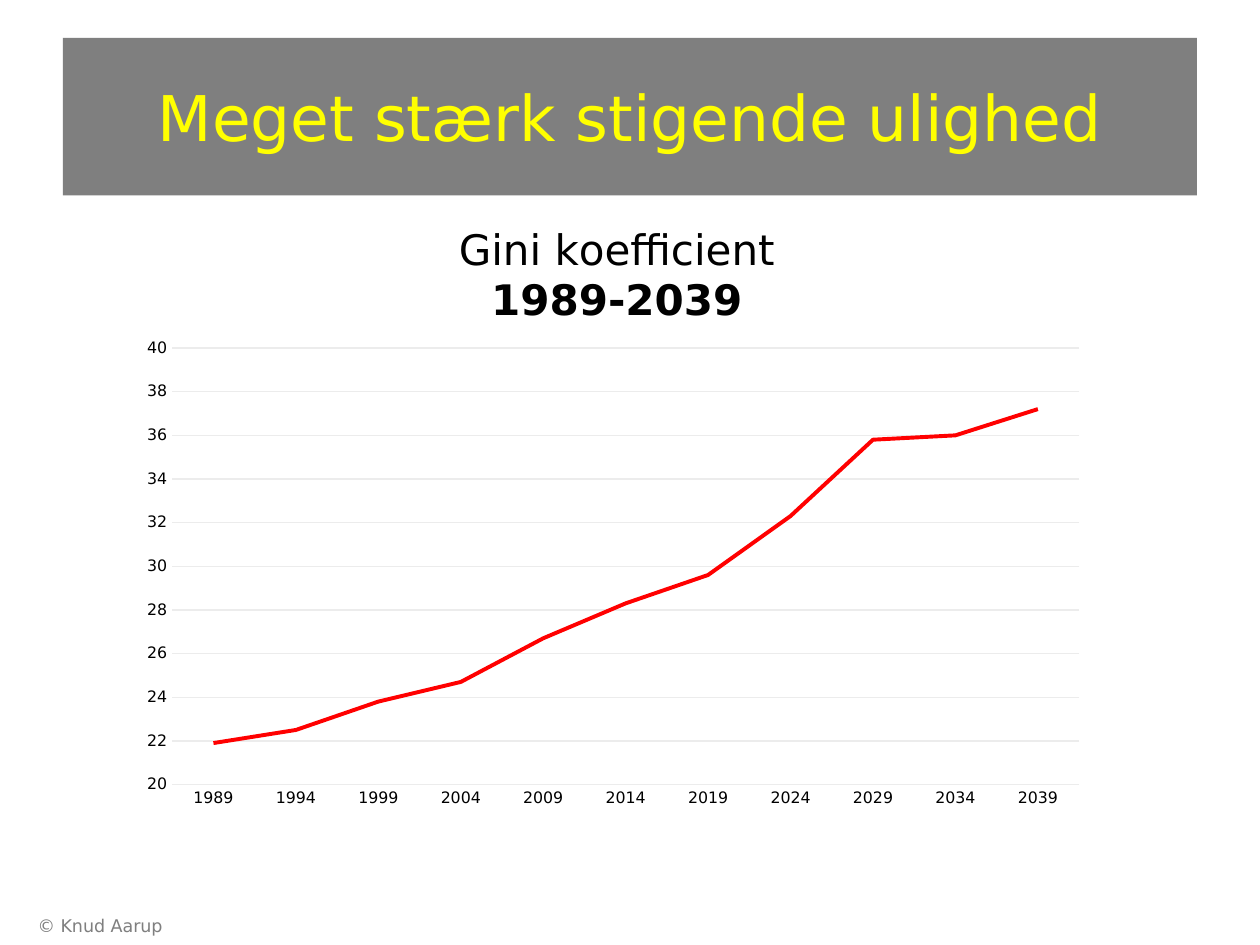
import pptx
import pptx.chart.data
import pptx.dml.color
import pptx.enum.chart
import pptx.enum.shapes
import pptx.enum.text
import pptx.oxml
import pptx.oxml.ns
import pptx.util
from pptx.util import Inches

FONT = "DejaVu Sans"
COLORS = {"band": "7F7F7F", "heading": "FFFF00", "footer": "7F7F7F",
          "text": "000000", "grid": "ECECEC", "gini": "FF0000"}

HEADING = "Meget stærk stigende ulighed"
FOOTER = "© Knud Aarup"
CHART_TITLE = [("Gini koefficient", False), ("1989-2039", True)]
YEARS = [str(year) for year in range(1989, 2040, 5)]
GINI = [21.9, 22.5, 23.8, 24.7, 26.7, 28.3, 29.6, 32.3, 35.8, 36, 37.2]


def rgb(name):
    return pptx.dml.color.RGBColor.from_string(COLORS[name])


def set_font(font, size, color, bold=False):
    font.name = FONT
    font.size = pptx.util.Pt(size)
    font.bold = bold
    font.color.rgb = rgb(color)


def set_line(line, color, width):
    line.color.rgb = rgb(color)
    line.width = pptx.util.Pt(width)


def manual_layout(inner=False, **fractions):
    """Return a c:layout element placed by fractions of the chart's size."""
    target = '<c:layoutTarget val="inner"/>' if inner else ""
    modes = '<c:xMode val="edge"/><c:yMode val="edge"/>'
    sizes = "".join(f'<c:{key} val="{value}"/>' for key, value in fractions.items())
    return pptx.oxml.parse_xml(
        f'<c:layout {pptx.oxml.ns.nsdecls("c")}><c:manualLayout>'
        f"{target}{modes}{sizes}</c:manualLayout></c:layout>")


def replace_layout(parent, layout, position):
    for old in parent.findall(pptx.oxml.ns.qn("c:layout")):
        parent.remove(old)
    parent.insert(position, layout)


def add_heading(slide):
    band = slide.shapes.add_shape(pptx.enum.shapes.MSO_SHAPE.RECTANGLE,
                                  Inches(0.5), Inches(0.3), Inches(9), Inches(1.25))
    band.shadow.inherit = False
    band.fill.solid()
    band.fill.fore_color.rgb = rgb("band")
    band.line.fill.background()
    frame = band.text_frame
    frame.vertical_anchor = pptx.enum.text.MSO_ANCHOR.MIDDLE
    heading = frame.paragraphs[0]
    heading.text = HEADING
    heading.alignment = pptx.enum.text.PP_ALIGN.CENTER
    set_font(heading.font, 36, "heading")


def add_footer(slide):
    frame = slide.shapes.add_textbox(Inches(0.2), Inches(7.21),
                                     Inches(2.33), Inches(0.29)).text_frame
    frame.word_wrap = True
    footer = frame.paragraphs[0]
    footer.text = FOOTER
    set_font(footer.font, 10, "footer")


def add_gini_chart(slide):
    data = pptx.chart.data.CategoryChartData()
    data.categories = YEARS
    data.add_series("Gini koefficient", GINI)
    chart = slide.shapes.add_chart(pptx.enum.chart.XL_CHART_TYPE.LINE, Inches(0.98),
                                   Inches(1.55), Inches(7.74), Inches(4.95), data).chart
    chart.has_legend = False
    set_font(chart.font, 10, "text")

    title = chart.chart_title
    frame = title.text_frame
    for index, (text, bold) in enumerate(CHART_TITLE):
        paragraph = frame.add_paragraph() if index else frame.paragraphs[0]
        paragraph.text = text
        set_font(paragraph.font, 24, "text", bold)
    title.include_in_layout = False
    replace_layout(title._element, manual_layout(x=0.34, y=0.04), 1)

    no_tick = pptx.enum.chart.XL_TICK_MARK.NONE
    for axis in (chart.category_axis, chart.value_axis):
        axis.major_tick_mark = axis.minor_tick_mark = no_tick
        set_font(axis.tick_labels.font, 9, "text")
    set_line(chart.category_axis.format.line, "grid", 0.75)

    values = chart.value_axis
    values.minimum_scale, values.maximum_scale, values.major_unit = 20, 40, 2
    values.format.line.fill.background()
    set_line(values.major_gridlines.format.line, "grid", 0.75)
    values.tick_labels.number_format = "#,##0"
    values.tick_labels.number_format_is_linked = False

    plot = chart.plots[0]
    plot.vary_by_categories = False
    gini = plot.series[0]
    gini.smooth = False
    gini.marker.style = pptx.enum.chart.XL_MARKER_STYLE.NONE
    set_line(gini.format.line, "gini", 2.25)
    plot_area = chart._chartSpace.chart.plotArea
    replace_layout(plot_area,
                   manual_layout(inner=True, x=0.05, y=0.245, w=0.93, h=0.7), 0)


def main():
    deck = pptx.Presentation()
    deck.slide_width, deck.slide_height = Inches(10), Inches(7.5)
    slide = deck.slides.add_slide(deck.slide_layouts[6])
    add_heading(slide)
    add_footer(slide)
    add_gini_chart(slide)
    deck.save("out.pptx")


if __name__ == "__main__":
    main()
